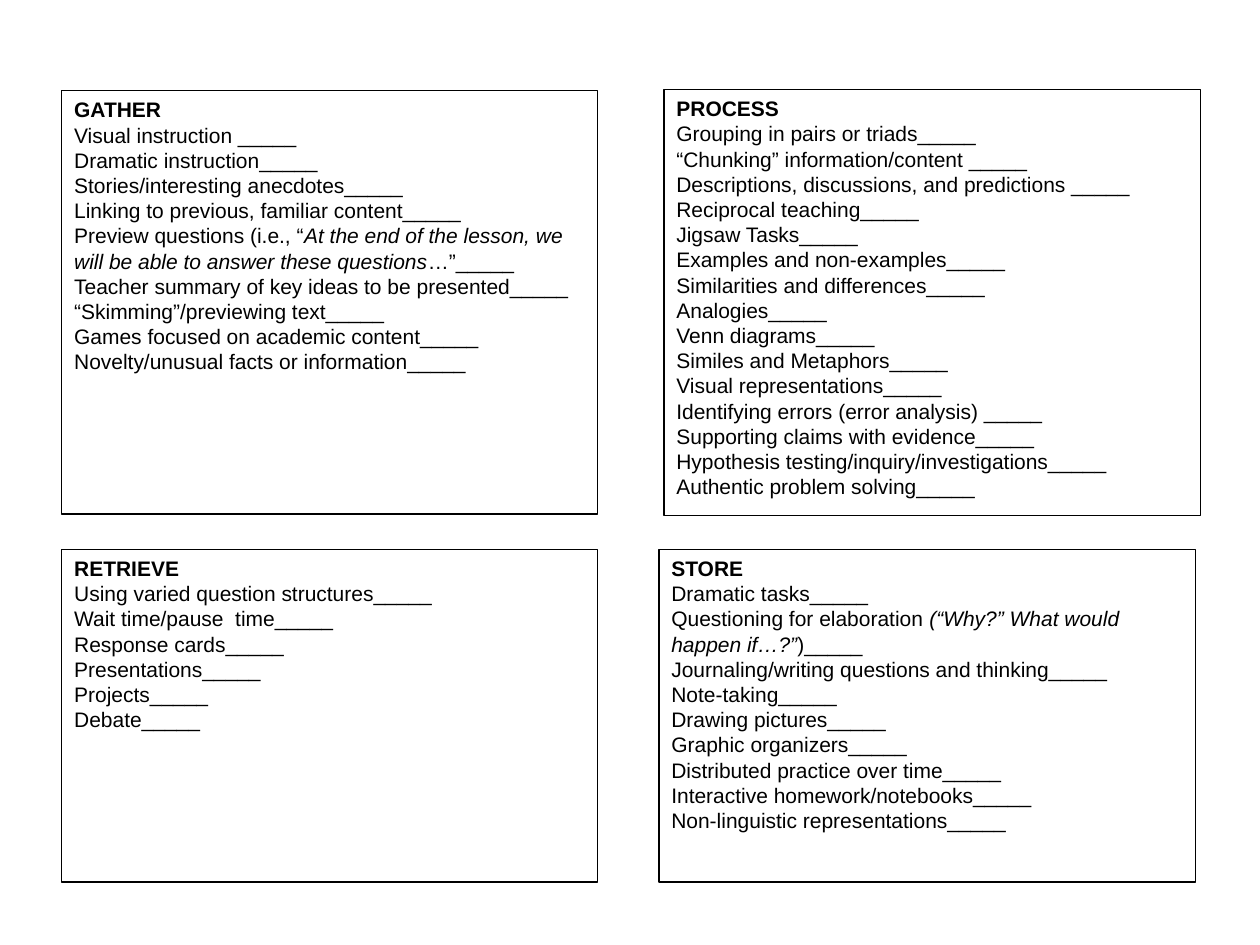
import pptx
import pptx.util
import pptx.dml.color
import pptx.enum.shapes
import pptx.enum.text

Inches, Pt = pptx.util.Inches, pptx.util.Pt
RGB = pptx.dml.color.RGBColor.from_string

COLORS = {"ink": "000000", "paper": "FFFFFF"}
FONT = "Arial"
SIZE = 12
PITCH = 14.4
BLANK = "_____"  # answer line that ends every item

# Each box: heading, (left, top, width, height), items.
# An item is a string, or a tuple whose odd-numbered parts are italic.
BOXES = [
    ("GATHER", (0.49, 0.72, 4.25, 3.36), [
        "Visual instruction ",
        "Dramatic instruction",
        "Stories/interesting anecdotes",
        "Linking to previous, familiar content",
        ("Preview questions (i.e., “",
         "At the end of the lesson, we will be able to answer these questions",
         "…”"),
        "Teacher summary of key ideas to be presented",
        "“Skimming”/previewing text",
        "Games focused on academic content",
        "Novelty/unusual facts or information",
    ]),
    ("PROCESS", (5.27, 0.71, 4.26, 3.38), [
        "Grouping in pairs or triads",
        "“Chunking” information/content ",
        "Descriptions, discussions, and predictions ",
        "Reciprocal teaching",
        "Jigsaw Tasks",
        "Examples and non-examples",
        "Similarities and differences",
        "Analogies",
        "Venn diagrams",
        "Similes and Metaphors",
        "Visual representations",
        "Identifying errors (error analysis) ",
        "Supporting claims with evidence",
        "Hypothesis testing/inquiry/investigations",
        "Authentic problem solving",
    ]),
    ("STORE", (5.23, 4.36, 4.26, 2.64), [
        "Dramatic tasks",
        ("Questioning for elaboration ",
         "(“Why?” What would happen if…?”",
         ")"),
        "Journaling/writing questions and thinking",
        "Note-taking",
        "Drawing pictures",
        "Graphic organizers",
        "Distributed practice over time",
        "Interactive homework/notebooks",
        "Non-linguistic representations",
    ]),
    ("RETRIEVE", (0.49, 4.36, 4.25, 2.64), [
        "Using varied question structures",
        "Wait time/pause  time",
        "Response cards",
        "Presentations",
        "Projects",
        "Debate",
    ]),
]


def add_run(para, text, bold=False, italic=False):
    run = para.add_run()
    run.text = text
    font = run.font
    font.name, font.size = FONT, Pt(SIZE)
    font.bold, font.italic = bold, italic
    font.color.rgb = RGB(COLORS["ink"])


def add_box(slide, head, place, items):
    # Outlined rectangle
    box = slide.shapes.add_shape(
        pptx.enum.shapes.MSO_SHAPE.RECTANGLE, *map(Inches, place))
    box.shadow.inherit = False
    box.fill.solid()
    box.fill.fore_color.rgb = RGB(COLORS["paper"])
    box.line.color.rgb = RGB(COLORS["ink"])
    box.line.width = Pt(0.75)

    # Heading, then one paragraph per item
    frame = box.text_frame
    frame.word_wrap = True
    frame.vertical_anchor = pptx.enum.text.MSO_ANCHOR.TOP
    for row in range(len(items) + 1):
        para = frame.add_paragraph() if row else frame.paragraphs[0]
        para.alignment = pptx.enum.text.PP_ALIGN.LEFT
        para.line_spacing = Pt(PITCH)
        if row == 0:
            add_run(para, head, bold=True)
            continue
        item = items[row - 1]
        parts = [item] if isinstance(item, str) else list(item)
        parts[-1] += BLANK
        for i, text in enumerate(parts):
            add_run(para, text, italic=i % 2 == 1)


def main():
    deck = pptx.Presentation()
    deck.slide_width, deck.slide_height = Inches(10), Inches(7.5)
    slide = deck.slides.add_slide(deck.slide_layouts[6])
    for head, place, items in BOXES:
        add_box(slide, head, place, items)
    deck.save("out.pptx")


if __name__ == "__main__":
    main()
